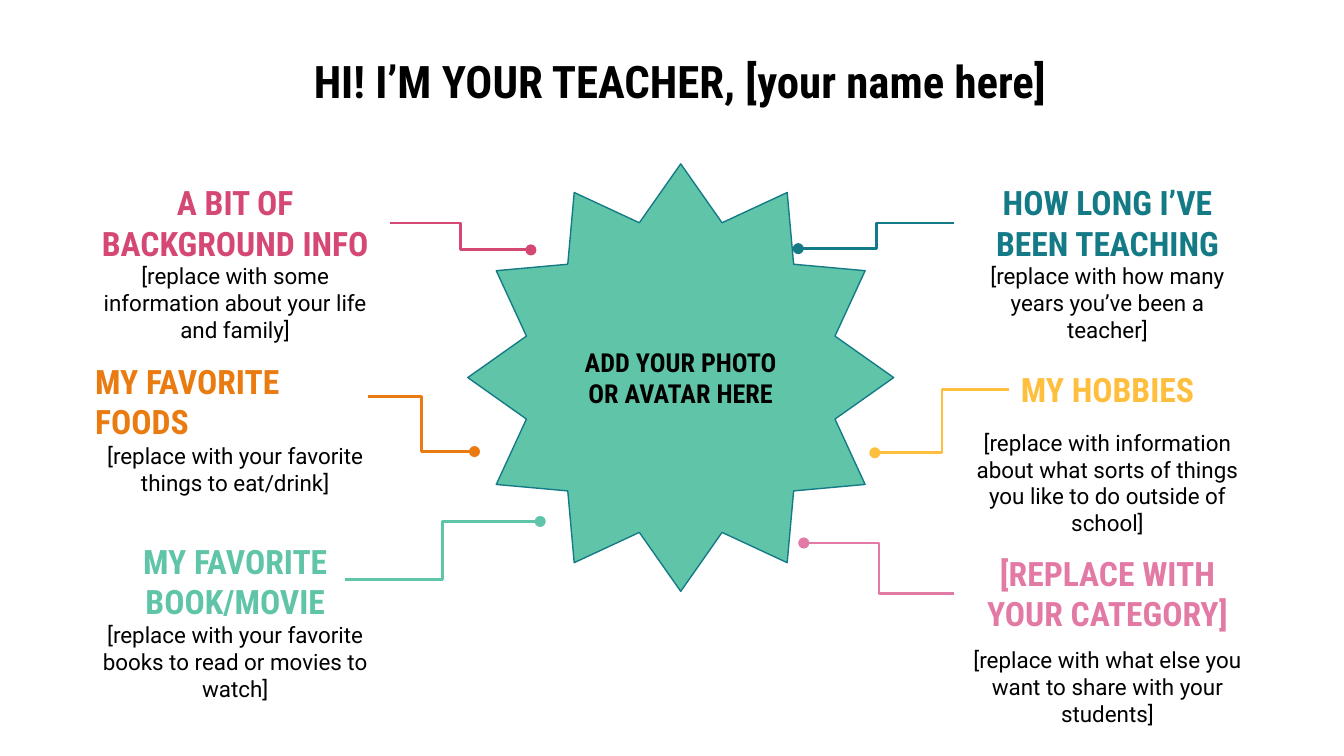
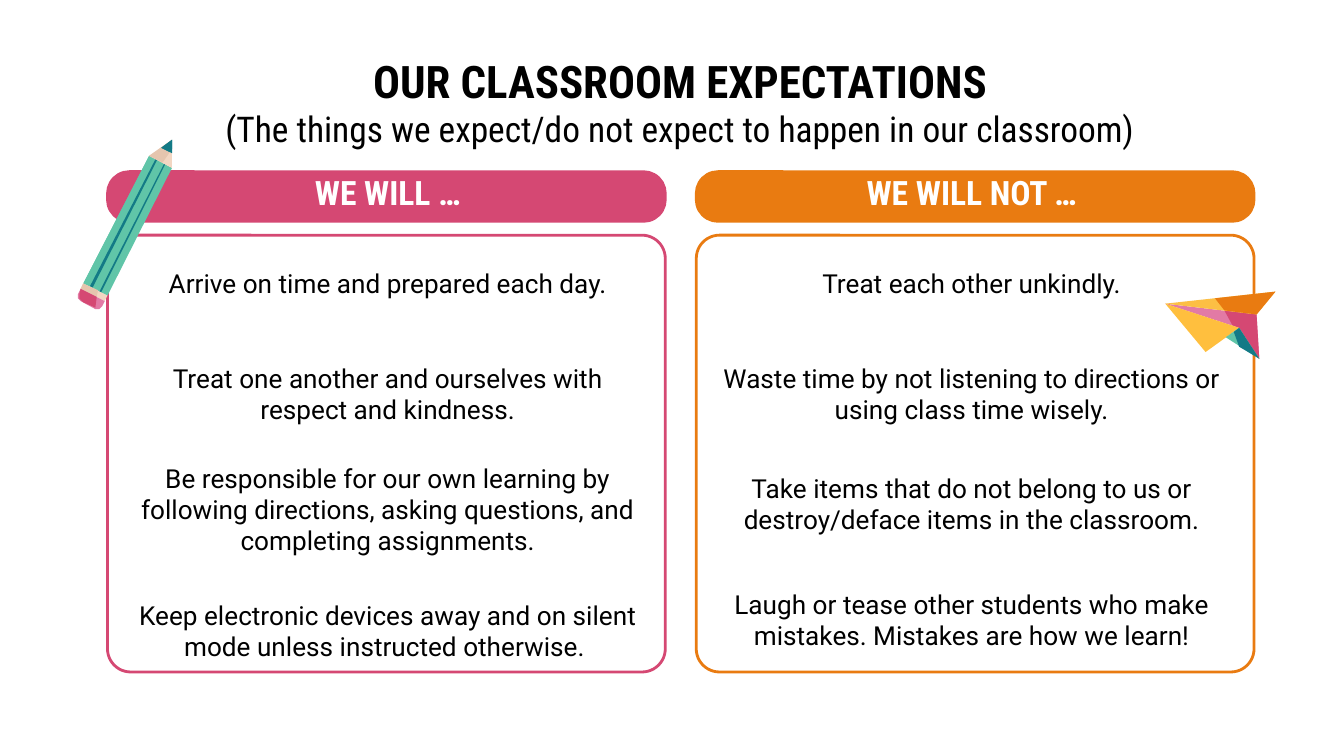
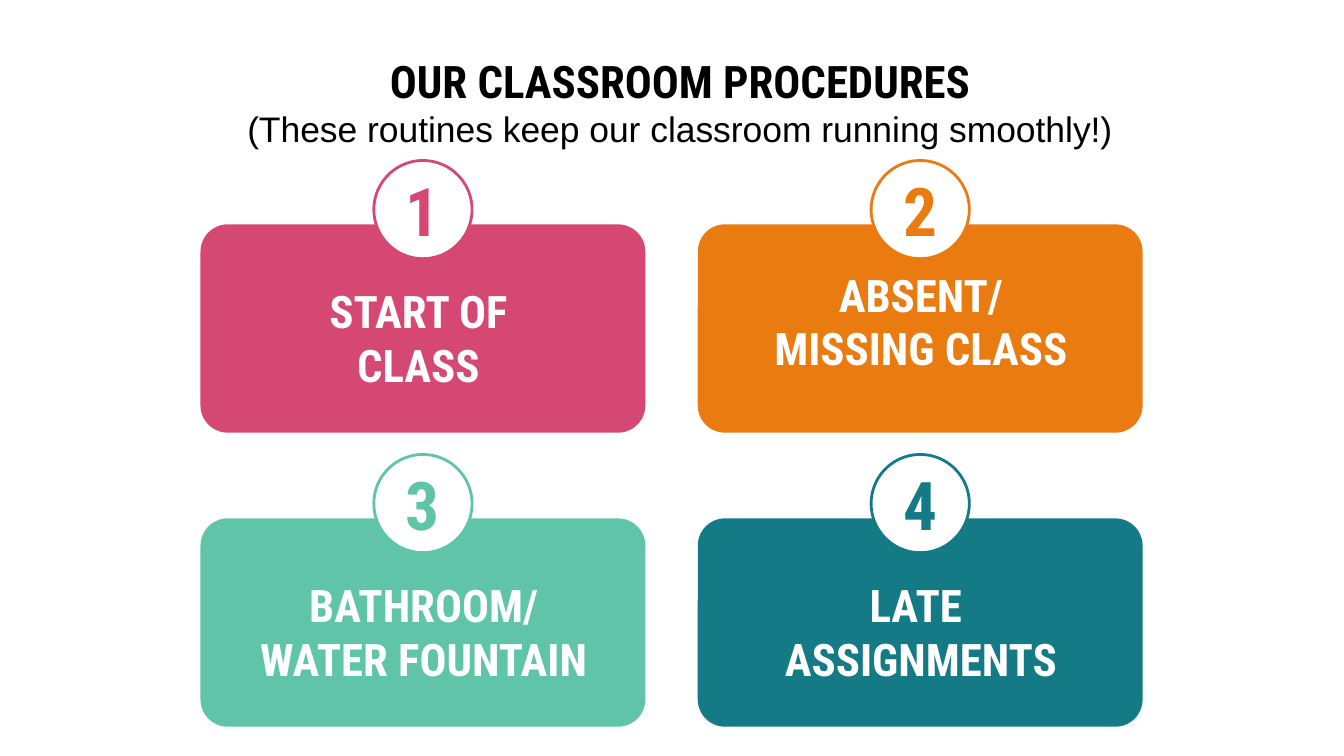
from dataclasses import dataclass
from typing import NamedTuple, Optional

from pptx import Presentation
from pptx.dml.color import RGBColor
from pptx.enum.shapes import MSO_CONNECTOR, MSO_SHAPE
from pptx.enum.text import MSO_ANCHOR, PP_ALIGN
from pptx.oxml import parse_xml
from pptx.oxml.ns import nsdecls
from pptx.util import Pt

PINK, ORANGE, MINT, TEAL = "D54873", "E97B11", "60C5A8", "137A86"
YELLOW, GOLD, ROSE = "FFBF3E", "FCBF44", "E27AA5"
WOOD, WOOD_SHADE = "F2D6C2", "E5C5AE"
BLACK, WHITE = "000000", "FFFFFF"
HEADING, BODY = "Roboto Condensed", "Roboto"
INSET = Pt(7.2)
DRAWING_UNIT = Pt(0.72)

Point = tuple[float, float]


class Box(NamedTuple):
    left: float
    top: float
    width: float
    height: float


class Style(NamedTuple):
    size: float
    color: str = BLACK
    font: str = HEADING
    bold: bool = True
    align: PP_ALIGN = PP_ALIGN.CENTER


@dataclass
class Fact:
    heading: str
    note: str
    color: str
    left: float
    top: float
    start: Point
    end: Point
    note_gap: float = 28.1
    align: PP_ALIGN = PP_ALIGN.CENTER


@dataclass
class RuleColumn:
    heading: str
    rules: list[str]
    color: str
    left: float
    table_left: float
    table_width: float


@dataclass
class Procedure:
    lines: list[str]
    color: str
    text_drop: float = 24.5


class Facet(NamedTuple):
    color: str
    corners: list[Point]


def rgb(color: str) -> RGBColor:
    return RGBColor.from_string(color)


def write(frame, lines: list[str], styles: list[Style], anchor=MSO_ANCHOR.TOP) -> None:
    frame.word_wrap = True
    frame.vertical_anchor = anchor
    frame.margin_left = frame.margin_right = INSET
    frame.margin_top = frame.margin_bottom = INSET
    for index, (line, style) in enumerate(zip(lines, styles)):
        paragraph = frame.paragraphs[0] if index == 0 else frame.add_paragraph()
        paragraph.text = line
        paragraph.alignment = style.align
        paragraph.font.name = style.font
        paragraph.font.size = Pt(style.size)
        paragraph.font.bold = style.bold
        paragraph.font.color.rgb = rgb(style.color)


def add_text(slide, box: Box, lines: list[str], styles: list[Style], anchor=MSO_ANCHOR.TOP) -> None:
    label = slide.shapes.add_textbox(*map(Pt, box))
    write(label.text_frame, lines, styles, anchor)


def paint(shape, fill: Optional[str], line: Optional[str] = None, weight: float = 1.5) -> None:
    shape.shadow.inherit = False
    if fill:
        shape.fill.solid()
        shape.fill.fore_color.rgb = rgb(fill)
    else:
        shape.fill.background()
    if line:
        shape.line.color.rgb = rgb(line)
        shape.line.width = Pt(weight)
    else:
        shape.line.fill.background()


def add_preset(slide, preset, box: Box, fill: Optional[str], line: Optional[str] = None,
               weight: float = 1.5, adjustment: Optional[float] = None):
    shape = slide.shapes.add_shape(preset, *map(Pt, box))
    paint(shape, fill, line, weight)
    if adjustment is not None:
        shape.adjustments[0] = adjustment
    return shape


def add_pointer(slide, fact: Fact) -> None:
    pointer = slide.shapes.add_connector(
        MSO_CONNECTOR.ELBOW, *map(Pt, fact.start + fact.end))
    pointer.line.color.rgb = rgb(fact.color)
    pointer.line.width = Pt(1.5)
    pointer.line._get_or_add_ln().append(
        parse_xml(f'<a:tailEnd type="oval" {nsdecls("a")}/>'))
    pointer._element.spPr.append(parse_xml(f'<a:effectLst {nsdecls("a")}/>'))


def add_facets(slide, facets: list[Facet]) -> None:
    for facet in facets:
        builder = slide.shapes.build_freeform(*facet.corners[0], scale=DRAWING_UNIT)
        builder.add_line_segments(facet.corners[1:], close=True)
        paint(builder.convert_to_shape(), facet.color)


def add_slide(deck, title: str, subtitle: str = "", subtitle_font: str = HEADING):
    slide = deck.slides.add_slide(deck.slide_layouts[6])
    slide.background.fill.solid()
    slide.background.fill.fore_color.rgb = rgb(WHITE)
    lines = [title, subtitle] if subtitle else [title]
    add_text(slide, Box(28.8, 21.6, 671, 45.4), lines,
             [Style(24), Style(19, font=subtitle_font, bold=False)])
    return slide


LEFT, RIGHT = 43.9, 511.2
FACTS = [
    Fact("A BIT OF BACKGROUND INFO",
         "[replace with some information about your life and family]",
         PINK, LEFT, 105.1, (208.8, 119.5), (284.4, 133.9)),
    Fact("MY FAVORITE FOODS", "[replace with your favorite things to eat/drink]",
         ORANGE, LEFT, 200.9, (197.3, 212.4), (254.2, 241.9), 28.8, PP_ALIGN.LEFT),
    Fact("MY FAVORITE BOOK/MOVIE",
         "[replace with your favorite books to read or movies to watch]",
         MINT, LEFT, 297.4, (185, 310.3), (289.4, 279.4)),
    Fact("HOW LONG I’VE BEEN TEACHING",
         "[replace with how many years you’ve been a teacher]",
         TEAL, RIGHT, 105.1, (511.2, 119.5), (427.7, 133.2)),
    Fact("MY HOBBIES",
         "[replace with information about what sorts of things you like to do outside of school]",
         YELLOW, RIGHT, 194.4, (540.7, 208.8), (468.7, 242.6)),
    Fact("[REPLACE WITH YOUR CATEGORY]",
         "[replace with what else you want to share with your students]",
         ROSE, RIGHT, 303.8, (511.2, 318.2), (430.6, 290.9), 35.3),
]


def build_introduction(deck) -> None:
    slide = add_slide(deck, "HI! I’M YOUR TEACHER, [your name here]")
    for fact in FACTS:
        add_text(slide, Box(fact.left, fact.top, 164.2, 28.1), [fact.heading],
                 [Style(18, fact.color, align=fact.align)], MSO_ANCHOR.MIDDLE)
        add_text(slide, Box(fact.left, fact.top + fact.note_gap, 164.2, 36.7),
                 [fact.note], [Style(12, font=BODY, bold=False)])
        add_pointer(slide, fact)
    star = add_preset(slide, MSO_SHAPE.STAR_12_POINT, Box(250.6, 87.8, 228.2, 229),
                      MINT, TEAL, 0.75, 0.375)
    write(star.text_frame, ["ADD YOUR PHOTO OR AVATAR HERE"], [Style(14)], MSO_ANCHOR.MIDDLE)


RULE_COLUMNS = [
    RuleColumn("WE WILL …", [
        "Arrive on time and prepared each day.",
        "Treat one another and ourselves with respect and kindness.",
        "Be responsible for our own learning by following directions, "
        "asking questions, and completing assignments.",
        "Keep electronic devices away and on silent mode unless instructed otherwise. ",
    ], PINK, 57.6, 64.1, 287.3),
    RuleColumn("WE WILL NOT …", [
        "Treat each other unkindly.",
        "Waste time by not listening to directions or using class time wisely.",
        "Take items that do not belong to us or destroy/deface items in the classroom.",
        "Laugh or tease other students who make mistakes. Mistakes are how we learn!",
    ], ORANGE, 373, 378.7, 283.7),
]
ROW_HEIGHTS = [38.2, 59, 59, 59, 64.8]

NOSE, WING_TIP, FOLD, TAIL, KEEL = (867, 226), (949, 217), (935, 234), (937, 267), (922, 244)
PLANE = [
    Facet(ROSE, [NOSE, FOLD, TAIL, KEEL]),
    Facet(PINK, [(911, 231), FOLD, TAIL, KEEL, (917, 242)]),
    Facet(YELLOW, [NOSE, KEEL, (897, 262)]),
    Facet(GOLD, [NOSE, WING_TIP, FOLD]),
    Facet(ORANGE, [(904, 222), WING_TIP, FOLD, (911, 231)]),
    Facet(MINT, [KEEL, TAIL, (912, 251)]),
    Facet(TEAL, [KEEL, TAIL, (922, 258), (918, 247)]),
]

NECK_LEFT, NECK_RIGHT, LEAD = (111, 116), (128, 125), (128, 104)
BASE_LEFT, BASE_RIGHT = (62, 211), (80, 220)
RUBBER_LEFT, RUBBER_RIGHT = (60, 215), (78, 224)
PENCIL = [
    Facet(MINT, [NECK_LEFT, BASE_LEFT, BASE_RIGHT, NECK_RIGHT]),
    Facet(MINT, [NECK_LEFT, BASE_LEFT, (73, 216), (98, 163), (118, 127), (121, 121)]),
    Facet(TEAL, [(116, 118), (67, 213), (69, 214), (117, 119)]),
    Facet(TEAL, [(122, 122), (74, 217), (75, 218), (123, 122)]),
    Facet(WOOD, [NECK_LEFT, NECK_RIGHT, LEAD]),
    Facet(WOOD_SHADE, [NECK_LEFT, (121, 121), (128, 111), LEAD]),
    Facet(TEAL, [(120, 110), (128, 114), LEAD]),
    Facet(TEAL, [(120, 110), (126, 113), (128, 111), LEAD]),
    Facet(WOOD, [BASE_LEFT, RUBBER_LEFT, RUBBER_RIGHT, BASE_RIGHT]),
    Facet(WOOD_SHADE, [BASE_LEFT, RUBBER_LEFT, (72, 221), (73, 216)]),
    Facet(ROSE, [RUBBER_LEFT, (58, 219), (58, 222), (60, 224), (71, 230),
                 (74, 230), (76, 228), RUBBER_RIGHT]),
    Facet(PINK, [RUBBER_LEFT, (59, 219), (59, 222), (62, 225), (69, 228),
                 (71, 229), (72, 221)]),
]


def add_rule_table(slide, column: RuleColumn) -> None:
    box = Box(column.table_left, 85, column.table_width, sum(ROW_HEIGHTS))
    table = slide.shapes.add_table(len(ROW_HEIGHTS), 1, *map(Pt, box)).table
    table.first_row = table.horz_banding = False
    heading_style = Style(18, WHITE)
    rule_style = Style(14, font=BODY, bold=False)
    for index, (height, wording) in enumerate(zip(ROW_HEIGHTS, [column.heading, *column.rules])):
        table.rows[index].height = Pt(height)
        cell = table.cell(index, 0)
        write(cell.text_frame, [wording], [rule_style if index else heading_style])
        cell.vertical_anchor = MSO_ANCHOR.MIDDLE
        cell.margin_left = cell.margin_right = INSET
        cell.margin_top = cell.margin_bottom = INSET
        cell.fill.background()
        for position, side in enumerate(("lnL", "lnR", "lnT", "lnB")):
            cell._tc.get_or_add_tcPr().insert(
                position, parse_xml(f'<a:{side} {nsdecls("a")}><a:noFill/></a:{side}>'))


def build_expectations(deck) -> None:
    slide = add_slide(deck, "OUR CLASSROOM EXPECTATIONS",
                      "(The things we expect/do not expect to happen in our classroom)")
    for column in RULE_COLUMNS:
        add_preset(slide, MSO_SHAPE.ROUNDED_RECTANGLE, Box(column.left, 126, 298.8, 234),
                   None, column.color, adjustment=0.053)
        add_preset(slide, MSO_SHAPE.ROUNDED_RECTANGLE, Box(column.left, 92, 298.8, 26.6),
                   column.color, column.color, adjustment=0.438)
        add_rule_table(slide, column)
    add_facets(slide, PLANE)
    add_facets(slide, PENCIL)


PROCEDURES = [
    Procedure(["START OF ", "CLASS "], PINK),
    Procedure(["ABSENT/", "MISSING CLASS"], ORANGE, 15.8),
    Procedure(["BATHROOM/", "WATER FOUNTAIN"], MINT),
    Procedure(["LATE ", "ASSIGNMENTS"], TEAL),
]


def build_procedures(deck) -> None:
    slide = add_slide(deck, "OUR CLASSROOM PROCEDURES",
                      "(These routines keep our classroom running smoothly!)", "Arial")
    for index, procedure in enumerate(PROCEDURES):
        row, column = divmod(index, 2)
        left, top = 107.4 + column * 266.4, 120.2 + row * 157.5
        add_preset(slide, MSO_SHAPE.ROUNDED_RECTANGLE, Box(left, top, 238.3, 111.6),
                   procedure.color, adjustment=0.131)
        add_text(slide, Box(left + 2.5, top + procedure.text_drop, 234, 31),
                 procedure.lines, [Style(24, WHITE)] * 2)
        badge = add_preset(slide, MSO_SHAPE.OVAL, Box(left + 92.9, top - 34.2, 52.6, 52.6),
                           WHITE, procedure.color)
        write(badge.text_frame, [str(index + 1)], [Style(36, procedure.color)],
              MSO_ANCHOR.MIDDLE)


def main() -> None:
    deck = Presentation()
    deck.slide_width, deck.slide_height = Pt(720), Pt(405)
    build_introduction(deck)
    build_expectations(deck)
    build_procedures(deck)
    deck.save("out.pptx")


if __name__ == "__main__":
    main()
